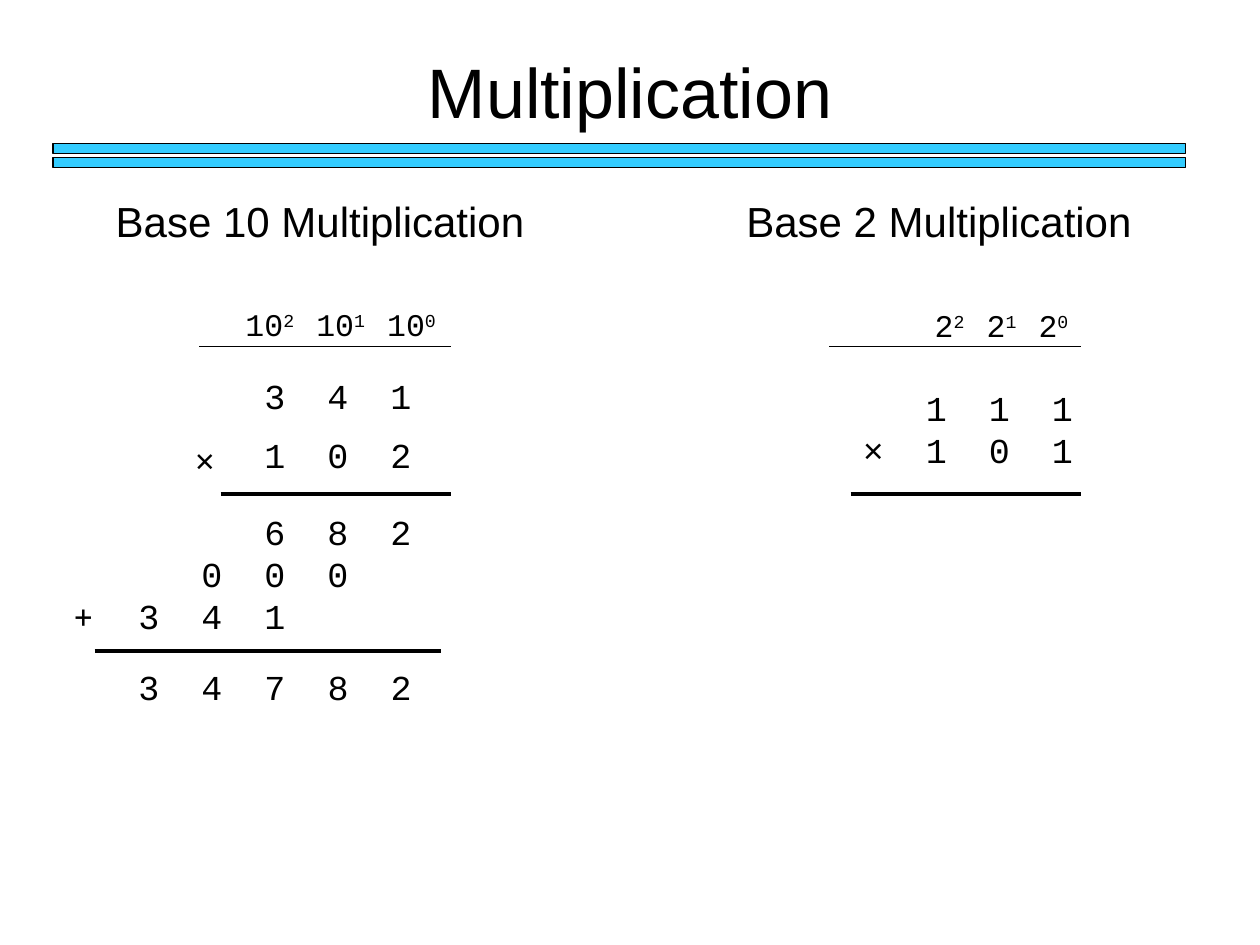
from lxml.etree import SubElement
from pptx import Presentation
from pptx.dml.color import RGBColor as Color
from pptx.enum.shapes import MSO_CONNECTOR as Connector, MSO_SHAPE as Shape
from pptx.enum.text import MSO_ANCHOR as Anchor, PP_ALIGN as Align
from pptx.oxml.ns import qn
from pptx.util import Inches, Pt

COLORS = {"ink": "000000", "bar": "33CCFF"}
MONO, SANS, SIGN = "Courier New", "Arial", "Noto Sans Mono"

deck = Presentation()
deck.slide_width, deck.slide_height = Inches(10), Inches(7.5)
COLUMN, ROW = deck.slide_width / 20, deck.slide_height / 15
ink = Color.from_string(COLORS["ink"])
page = deck.slides.add_slide(deck.slide_layouts[5])


def place(columns, rows):
    return round(columns * COLUMN), round(rows * ROW)


def write(text, left, top, width, height, size=20, font=MONO,
          tracking=0, indents=(0, 0, 0), gap=0):
    box = page.shapes.add_textbox(*place(left, top), *place(width, height))
    frame = box.text_frame
    frame.word_wrap = True
    for number, line in enumerate(text.split("\n")):
        para = frame.add_paragraph() if number else frame.paragraphs[0]
        para.line_spacing = Pt(size * 1.2)
        para.space_before = Pt(gap if number else 0)
        props = para._p.get_or_add_pPr()
        props.set("marL", str(place(indents[number], 0)[0]))
        props.set("indent", "0")
        parts = [(line, size, 0)]
        if "^" in line:
            parts = []
            for power in line.split(" "):
                base, exponent = power.split("^")
                parts += [(base, size, 0), (exponent, size, 30000), (" ", size + 3, 0)]
            parts.pop()
        for content, points, raised in parts:
            span = para.add_run()
            span.text = content
            span.font.name, span.font.size = font, Pt(points)
            span.font.color.rgb = ink
            if raised:
                span.font._element.set("baseline", str(raised))
            if tracking:
                span.font._element.set("spc", str(tracking * 100))


title = page.shapes.title
title.left, title.top = place(1.5, 0.18)
title.width, title.height = place(17, 2.5)
title.text_frame.text = "Multiplication"
title.text_frame.vertical_anchor = Anchor.MIDDLE
heading = title.text_frame.paragraphs[0]
heading.alignment = Align.CENTER
heading.font.name, heading.font.size = SANS, Pt(40)
heading.font.color.rgb = ink

bars = page.shapes.add_group_shape()
for top in (2.28, 2.5):
    bar = bars.shapes.add_shape(Shape.RECTANGLE, *place(0.84, top), *place(17.98, 0.16))
    bar.shadow.inherit = False
    bar.fill.solid()
    bar.fill.fore_color.rgb = Color.from_string(COLORS["bar"])
    bar.line.color.rgb = ink
    bar.line.width = Pt(0.75)

write("Base 10 Multiplication", 1.64, 3, 7.1, 1, size=24, font=SANS)
write("10^2 10^1 10^0", 3.7, 4.76, 4, 0.8, size=18)
write("3 4 1\n1 0 2", 4, 5.84, 5, 1.86, tracking=6, gap=10)
write("×", 2.89, 6.88, 0.8, 0.86, font=SIGN)
write("6 8 2\n0 0 0\n3 4 1", 2, 8, 5, 2.2, tracking=6, indents=(2, 1, 0))
write("+", 0.96, 9.36, 0.8, 0.86, font=SIGN)
write("3 4 7 8 2", 2, 10.46, 6, 0.86, tracking=6)

write("Base 2 Multiplication", 11.65, 3, 6.8, 1, size=24, font=SANS)
write("2^2 2^1 2^0", 14.64, 4.78, 3.4, 0.8, size=18)
write("1 1 1\n1 0 1", 14.5, 6.04, 3.4, 1.54, tracking=6)
write("×", 13.5, 6.7, 0.8, 0.86)

rules = [(offset + start, 7.16 + offset, row, weight)
         for offset in (0, 10)
         for start, row, weight in ((3.16, 5.5, 0.75), (3.5, 7.84, 2.25))]
rules.append((1.5, 7, 10.34, 2.25))
for start, end, row, weight in rules:
    rule = page.shapes.add_connector(
        Connector.STRAIGHT, *place(start, row), *place(end, row))
    rule.line.color.rgb = ink
    rule.line.width = Pt(weight)
    SubElement(rule._element.spPr, qn("a:effectLst"))

deck.save("out.pptx")
